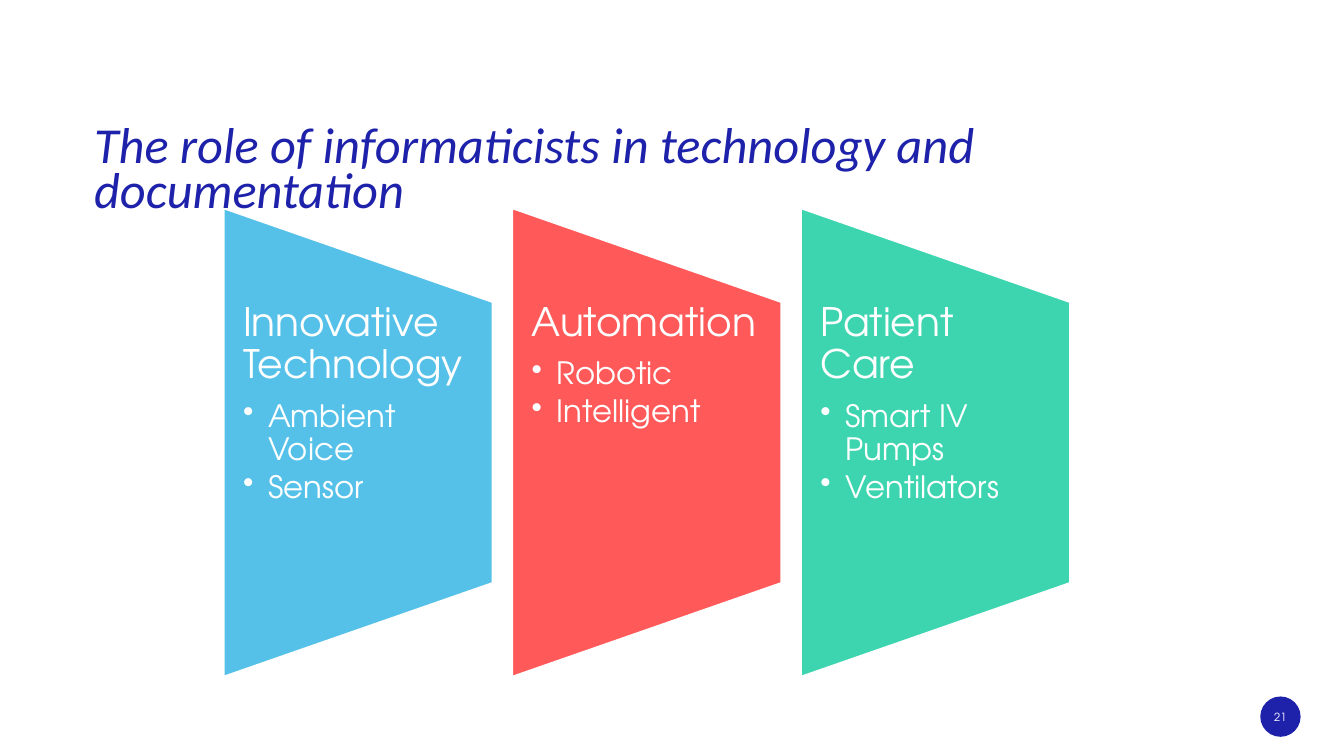
from lxml import etree
from pptx import Presentation
from pptx import util as u
from pptx.dml.color import RGBColor
from pptx.enum import shapes, text
from pptx.oxml import ns

WIDTH, HEIGHT = 13.33, 7.5
NAVY, WHITE = "1E22AA", "FFFFFF"
BODY_FONT = "TeX Gyre Adventor"
PANELS = [
    ("55C1E9", "Innovative Technology", ["Ambient Voice", "Sensor"]),
    ("FF5959", "Automation", ["Robotic", "Intelligent"]),
    ("3CD5AF", "Patient Care", ["Smart IV Pumps", "Ventilators"]),
]


def color(hex_value):
    return RGBColor.from_string(hex_value)


def add_shape(slide, kind, box, fill):
    shape = slide.shapes.add_shape(kind, *map(u.Inches, box))
    shape.shadow.inherit = False
    shape.fill.solid()
    shape.fill.fore_color.rgb = color(fill)
    shape.line.fill.background()
    return shape


def add_frame(slide, box, left=0, right=0):
    """Add a wrapping text box with the given side insets; return its text frame."""
    frame = slide.shapes.add_textbox(*map(u.Inches, box)).text_frame
    frame.word_wrap = True
    frame.margin_left, frame.margin_right = u.Inches(left), u.Inches(right)
    frame.margin_top = frame.margin_bottom = 0
    return frame


def write(paragraph, content, size, fill=WHITE, font=BODY_FONT, italic=False):
    run = paragraph.add_run()
    run.text = content
    run.font.name, run.font.size = font, u.Pt(size)
    run.font.color.rgb = color(fill)
    run.font.italic = italic


def add_bullet(paragraph, indent=0.25):
    properties = paragraph._p.get_or_add_pPr()
    properties.set("marL", str(u.Inches(indent)))
    properties.set("indent", str(-u.Inches(indent)))
    etree.SubElement(properties, ns.qn("a:buChar")).set("char", "•")


def add_title(slide, box):
    paragraph = add_frame(slide, box).paragraphs[0]
    paragraph.line_spacing = 0.75
    write(paragraph, "The role of informaticists in technology and documentation",
          36, NAVY, "Calibri", italic=True)


def add_panel(slide, box, fill, heading, items):
    left, top, width, height = box
    # The preset lies on its side, so its box is swapped about the same centre.
    turned = (left + (width - height) / 2, top + (height - width) / 2, height, width)
    shape = add_shape(slide, shapes.MSO_SHAPE.FLOWCHART_MANUAL_OPERATION, turned, fill)
    shape.rotation = 270
    shape.line.color.rgb = color(WHITE)
    shape.line.width = u.Pt(1)

    frame = add_frame(slide, (left, top + height * 0.2, width, height * 0.6), 0.19, 0.2)
    paragraph = frame.paragraphs[0]
    paragraph.line_spacing = 0.9
    paragraph.space_after = u.Pt(9.8)
    write(paragraph, heading, 28)
    for item in items:
        paragraph = frame.add_paragraph()
        paragraph.level = 1
        paragraph.line_spacing = 0.9
        paragraph.space_after = u.Pt(3.3)
        add_bullet(paragraph)
        write(paragraph, item, 22)


def add_panels(slide, box, gap):
    left, top, width, height = box
    panel_width = (width - gap * (len(PANELS) - 1)) / len(PANELS)
    for index, panel in enumerate(PANELS):
        panel_left = left + index * (panel_width + gap)
        add_panel(slide, (panel_left, top, panel_width, height), *panel)


def add_page_number(slide, box, number):
    left, top, width, height = box
    add_shape(slide, shapes.MSO_SHAPE.OVAL, box, NAVY)
    frame = add_frame(slide, (left - 0.08, top + 0.08, width + 0.16, height - 0.15))
    frame.vertical_anchor = text.MSO_ANCHOR.MIDDLE
    paragraph = frame.paragraphs[0]
    paragraph.alignment = text.PP_ALIGN.CENTER
    write(paragraph, number, 8)


def main():
    presentation = Presentation()
    presentation.slide_width = u.Inches(WIDTH)
    presentation.slide_height = u.Inches(HEIGHT)
    slide = presentation.slides.add_slide(presentation.slide_layouts[6])
    add_title(slide, (WIDTH * 0.07, 1.26, 10.75, 1.12))
    add_panels(slide, (2.22, 2.07, 8.39, 4.64), gap=0.2)
    add_page_number(slide, (12.5, 6.91, 0.4, 0.4), "21")
    presentation.save("out.pptx")


if __name__ == "__main__":
    main()
